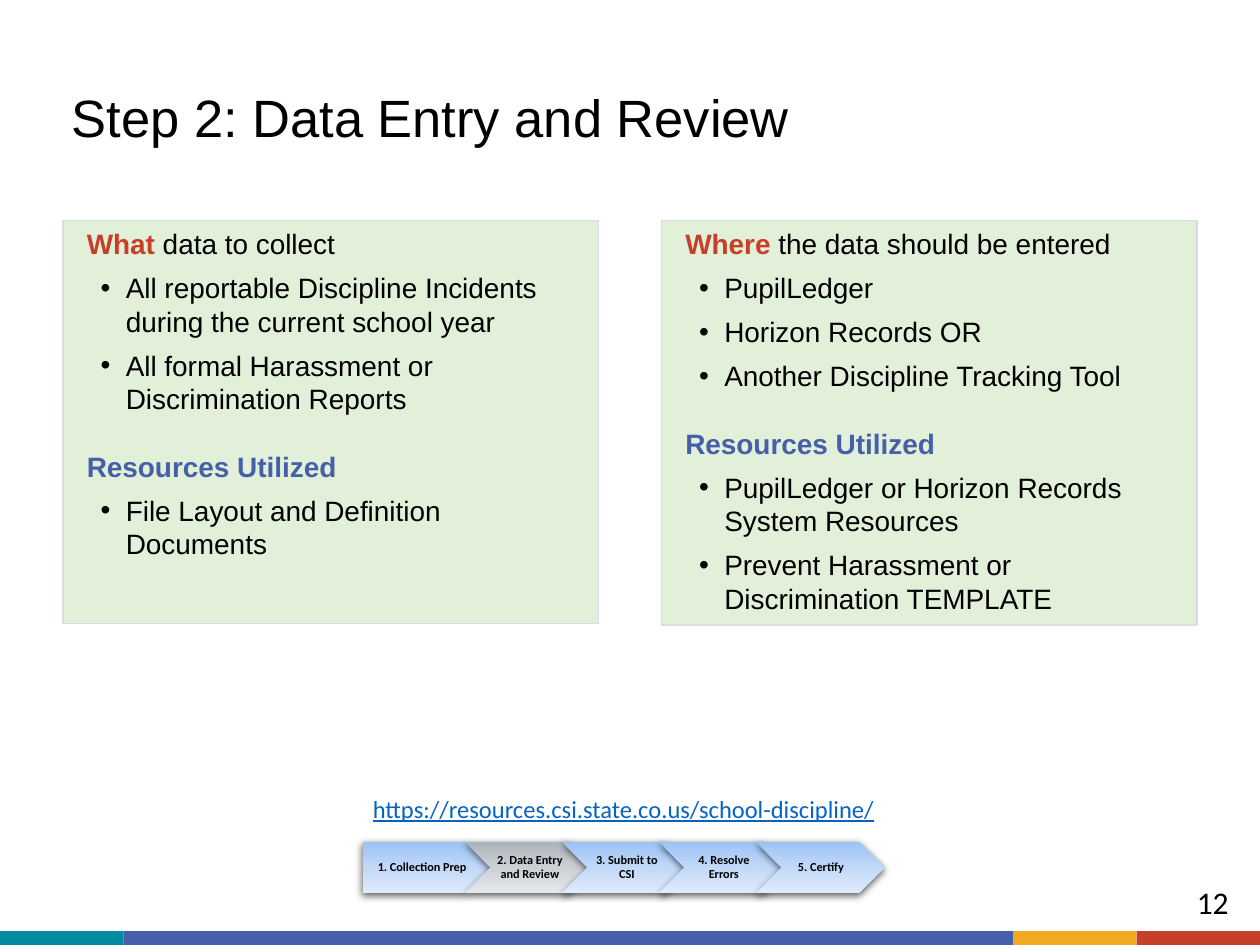
from lxml.etree import SubElement
from pptx import Presentation
from pptx.dml.color import RGBColor
from pptx.enum.shapes import MSO_SHAPE as Shape
from pptx.enum.text import MSO_ANCHOR as Anchor, PP_ALIGN as Align
from pptx.oxml.ns import qn
from pptx.util import Emu, Inches, Pt

COLORS = {
    "black": "000000", "red": "C63F28", "blue": "455FA9", "teal": "008CA0",
    "gold": "EFAA1F", "panel": "E2F0D9", "panel_edge": "D6DCE5", "link": "0563C1",
}
STEP_GRADIENT = ["9AC3F5", "C2D8F8", "E1EBFB"]
CURRENT_GRADIENT = ["ACB4BB", "CCD0D4", "E6E8EA"]

TITLE = "Step 2: Data Entry and Review"
RESOURCES = [("Resources Utilized", "blue")]
# Each panel holds sections: heading runs (text, color), then bullets.
PANELS = [
    (3.2, [
        ([("What", "red"), (" data to collect", "black")],
         ["All reportable Discipline Incidents during the current school year",
          "All formal Harassment or Discrimination Reports"]),
        (RESOURCES, ["File Layout and Definition Documents"]),
    ]),
    (3.21, [
        ([("Where ", "red"), ("the data should be entered", "black")],
         ["PupilLedger", "Horizon Records OR", "Another Discipline Tracking Tool"]),
        (RESOURCES,
         ["PupilLedger or Horizon Records System Resources",
          "Prevent Harassment or Discrimination TEMPLATE"]),
    ]),
]
LINK = "https://resources.csi.state.co.us/school-discipline/"
STEPS = ["1. Collection Prep", "2. Data Entry and Review", "3. Submit to CSI",
         "4. Resolve Errors", "5. Certify"]
CURRENT_STEP = 1
PAGE_NUMBER = "12"

WIDTH, HEIGHT = 10, 7.5
MARGIN, GUTTER = 0.5, 0.5
PANEL_TOP, PANEL_WIDTH = 1.75, (WIDTH - 2 * MARGIN - GUTTER) / 2
PANEL_LINE = Pt(19.2)
STEP_TOP, STEP_WIDTH, STEP_HEIGHT = 6.68, 1.02, 0.41
FIRST_STEP, FIRST_CHEVRON, STEP_PITCH = 2.88, 3.69, 0.77
FOOTER_HEIGHT, FOOTER_END = 0.11, 0.98
FOOTER = [("teal", FOOTER_END), ("blue", WIDTH - 3 * FOOTER_END),
          ("gold", FOOTER_END), ("red", FOOTER_END)]

prs = Presentation()
prs.slide_width, prs.slide_height = Inches(WIDTH), Inches(HEIGHT)
slide = prs.slides.add_slide(prs.slide_layouts[6])


def rgb(name):
    return RGBColor.from_string(COLORS[name])


def add_shape(kind, *box):
    shape = slide.shapes.add_shape(kind, *map(Inches, box))
    shape.shadow.inherit = False
    shape.line.fill.background()
    return shape


def add_bar(color, *box):
    bar = add_shape(Shape.RECTANGLE, *box)
    bar.fill.solid()
    bar.fill.fore_color.rgb = rgb(color)
    return bar


def set_font(font, size, name, color="black", bold=False):
    font.size, font.name, font.bold = Pt(size), name, bold
    font.color.rgb = rgb(color)


def add_text(text, box, size, name, color="black", bold=False, align=Align.LEFT,
             anchor=Anchor.TOP, insets=(0.1, 0.05, 0.1, 0.05), spacing=None):
    frame = slide.shapes.add_textbox(*map(Inches, box)).text_frame
    frame.word_wrap = True
    frame.vertical_anchor = anchor
    (frame.margin_left, frame.margin_top,
     frame.margin_right, frame.margin_bottom) = map(Inches, insets)
    paragraph = frame.paragraphs[0]
    paragraph.text = text
    paragraph.alignment, paragraph.line_spacing = align, spacing
    set_font(paragraph.font, size, name, color, bold)
    return paragraph


def indent(paragraph, left, first=0, bullet=None):
    props = paragraph._p.get_or_add_pPr()
    props.set("marL", str(Inches(left)))
    props.set("indent", str(Inches(first)))
    if bullet:
        SubElement(props, qn("a:buFont"), typeface="Arial")
        SubElement(props, qn("a:buChar"), char=bullet)


def fill_panel(frame, sections):
    frame.word_wrap = True
    frame.vertical_anchor = Anchor.TOP
    paragraphs = []

    def next_paragraph(space):
        paragraph = frame.add_paragraph() if paragraphs else frame.paragraphs[0]
        if paragraphs:
            paragraph.space_before = space
        paragraph.alignment, paragraph.line_spacing = Align.LEFT, PANEL_LINE
        paragraphs.append(paragraph)
        return paragraph

    for heading, bullets in sections:
        paragraph = next_paragraph(PANEL_LINE)
        indent(paragraph, 0.09)
        for text, color in heading:
            run = paragraph.add_run()
            run.text = text
            set_font(run.font, 16, "Arial", color, color != "black")
        for text in bullets:
            paragraph = next_paragraph(Pt(6))
            indent(paragraph, 0.4, -0.2, "•")
            paragraph.text = text
            set_font(paragraph.font, 16, "Arial")


def style_step(shape, gradient):
    """Apply a top-to-bottom gradient and a soft shadow below."""
    shape.fill.gradient()
    shape.fill.gradient_angle = 270
    props = shape._element.spPr
    stops = props.find(".//" + qn("a:gsLst"))
    stops.clear()
    for i, color in enumerate(gradient):
        stop = SubElement(stops, qn("a:gs"), pos=str(i * 50000))
        SubElement(stop, qn("a:srgbClr"), val=color)
    shadow = SubElement(props.find(qn("a:effectLst")), qn("a:outerShdw"),
                        blurRad=str(Pt(4.5)), dist=str(Pt(1.5)),
                        dir="5400000", algn="ctr", rotWithShape="0")
    shade = SubElement(shadow, qn("a:srgbClr"), val=COLORS["black"])
    SubElement(shade, qn("a:alpha"), val="63000")


left = 0
for color, width in FOOTER:
    add_bar(color, left, HEIGHT - FOOTER_HEIGHT, width, FOOTER_HEIGHT)
    left += width

add_text(TITLE, (MARGIN, 0.5, 8.7, 0.75), 30, "Arial", anchor=Anchor.BOTTOM,
         insets=(0.07,) * 4, spacing=0.9)

for column, (height, sections) in enumerate(PANELS):
    panel = add_bar("panel", MARGIN + column * (PANEL_WIDTH + GUTTER), PANEL_TOP,
                    PANEL_WIDTH, height)
    panel.line.color.rgb = rgb("panel_edge")
    panel.line.width = Pt(0.75)
    fill_panel(panel.text_frame, sections)

link = add_text(LINK, (2.45, 6.25, 5, 0.3), 14, "Calibri", "link", align=Align.CENTER)
link.font.underline = True

for i, label in enumerate(STEPS):
    if i == 0:
        kind, left, text_offset, text_width = Shape.PENTAGON, FIRST_STEP, 0, 0.92
    else:
        kind, left = Shape.CHEVRON, FIRST_CHEVRON + (i - 1) * STEP_PITCH
        text_offset, text_width = 0.2, 0.61
    step = add_shape(kind, left, STEP_TOP, STEP_WIDTH, STEP_HEIGHT)
    style_step(step, CURRENT_GRADIENT if i == CURRENT_STEP else STEP_GRADIENT)
    add_text(label, (left + text_offset, STEP_TOP, text_width, STEP_HEIGHT), 7,
             "Calibri", bold=True, align=Align.CENTER, anchor=Anchor.MIDDLE,
             insets=(0.03, 0.02, 0.01, 0.02), spacing=0.9)

add_text(PAGE_NUMBER, (9.4, 6.96, 0.6, 0.46), 18, "Calibri")

prs.save("out.pptx")
